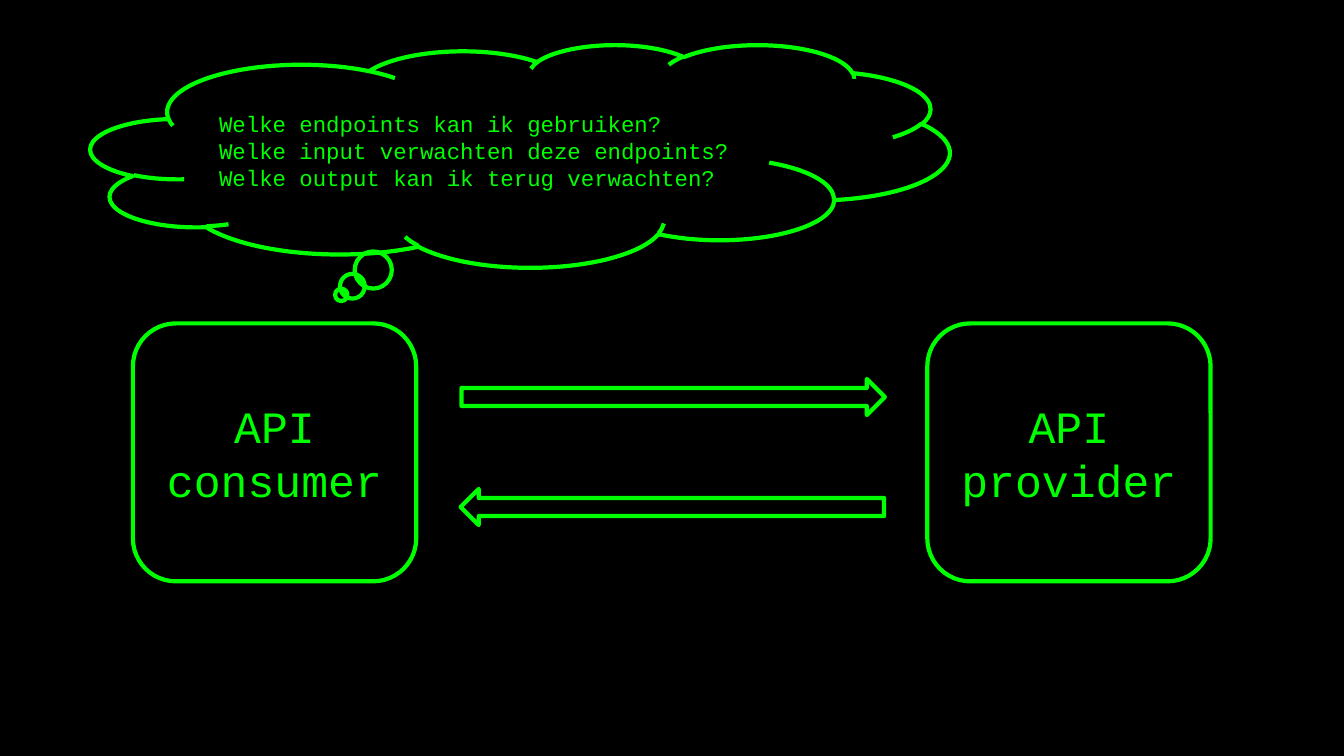
from pptx import Presentation
from pptx.dml.color import RGBColor
from pptx.enum.shapes import MSO_SHAPE
from pptx.enum.text import MSO_ANCHOR, PP_ALIGN
from pptx.util import Cm, Pt

ROUNDED = MSO_SHAPE.ROUNDED_RECTANGLE
ARROW = MSO_SHAPE.RIGHT_ARROW
CLOUD = MSO_SHAPE.CLOUD_CALLOUT
LEFT, CENTER = PP_ALIGN.LEFT, PP_ALIGN.CENTER
MIDDLE = MSO_ANCHOR.MIDDLE

COLORS = {"background": "000000", "neon": "00FF00"}
FONT = "Courier New"
QUESTIONS = [
    "Welke endpoints kan ik gebruiken?",
    "Welke input verwachten deze endpoints?",
    "Welke output kan ik terug verwachten?",
]


def color(name):
    return RGBColor.from_string(COLORS[name])


def add_outline(s, kind, left, top, width, height):
    sp = s.shapes.add_shape(kind, Cm(left), Cm(top), Cm(width), Cm(height))
    sp.shadow.inherit = False
    sp.fill.background()
    sp.line.color.rgb = color("neon")
    sp.line.width = Pt(3)
    return sp


def write(sp, lines, size, align):
    tf = sp.text_frame
    tf.word_wrap = True
    tf.vertical_anchor = MIDDLE
    tf.text = "\n".join(lines)
    for p in tf.paragraphs:
        p.alignment = align
        p.font.name = FONT
        p.font.size = Pt(size)
        p.font.color.rgb = color("neon")


def add_party(s, left, label):
    sp = add_outline(s, ROUNDED, left, 8.15, 7.14, 6.5)
    write(sp, [label], 32, CENTER)


def add_arrow(s, left, top, rotation=0):
    sp = add_outline(s, ARROW, left, top, 10.67, 0.91)
    sp.rotation = rotation


def add_thought(s, lines):
    sp = add_outline(s, CLOUD, 2.29, 1.12, 21.64, 5.61)
    write(sp, lines, 16, LEFT)


def main():
    prs = Presentation()
    prs.slide_width, prs.slide_height = Cm(33.87), Cm(19.05)
    s = prs.slides.add_slide(prs.slide_layouts.get_by_name("Blank"))
    s.background.fill.solid()
    s.background.fill.fore_color.rgb = color("background")

    add_party(s, 3.35, "API consumer")
    add_party(s, 23.37, "API provider")
    add_arrow(s, 11.63, 9.55)
    add_arrow(s, 11.61, 12.32, rotation=180)
    add_thought(s, QUESTIONS)

    prs.save("out.pptx")


if __name__ == "__main__":
    main()
